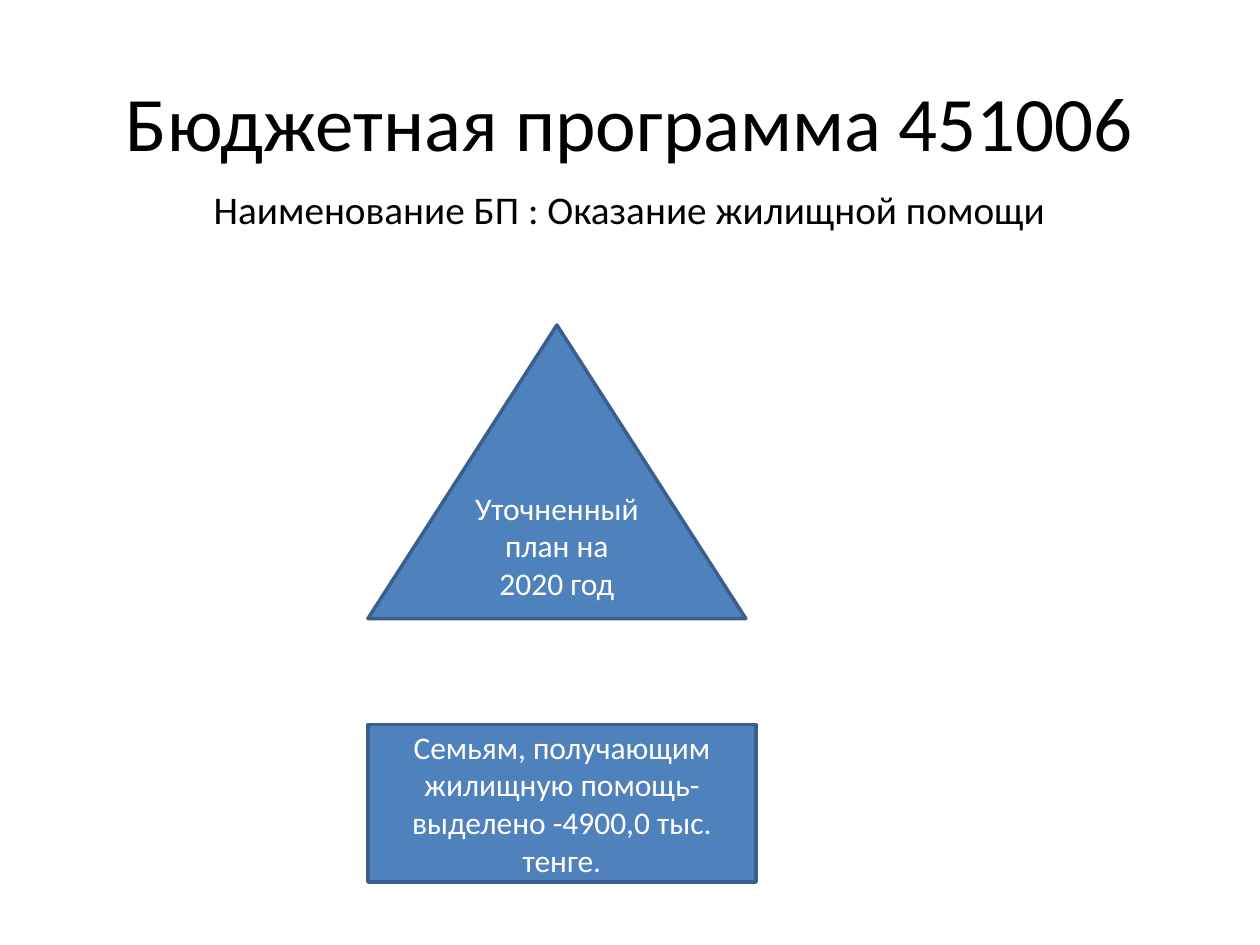
import pptx
import pptx.dml.color
import pptx.enum.shapes
import pptx.enum.text
import pptx.util
from pptx.util import Inches

BLACK = pptx.dml.color.RGBColor(0x00, 0x00, 0x00)
WHITE = pptx.dml.color.RGBColor(0xFF, 0xFF, 0xFF)
BLUE = pptx.dml.color.RGBColor(0x4F, 0x81, 0xBD)
DARK_BLUE = pptx.dml.color.RGBColor(0x3A, 0x5F, 0x8C)


def write_text(shape, text, size, color, anchor):
    """Put one centred paragraph into a shape."""
    frame = shape.text_frame
    frame.text = text
    frame.word_wrap = True
    frame.auto_size = pptx.enum.text.MSO_AUTO_SIZE.NONE
    frame.vertical_anchor = anchor
    paragraph = frame.paragraphs[0]
    paragraph.alignment = pptx.enum.text.PP_ALIGN.CENTER
    paragraph.font.name = "Calibri"
    paragraph.font.size = pptx.util.Pt(size)
    paragraph.font.color.rgb = color


def place_heading(placeholder, box, text, size, anchor):
    """Move a placeholder into its box and fill it."""
    placeholder.left, placeholder.top, placeholder.width, placeholder.height = box
    write_text(placeholder, text, size, BLACK, anchor)


def add_figure(slide, kind, box, text):
    """Draw a blue outlined figure with a white caption in its box."""
    shape = slide.shapes.add_shape(kind, *box)
    shape.shadow.inherit = False
    shape.fill.solid()
    shape.fill.fore_color.rgb = BLUE
    shape.line.color.rgb = DARK_BLUE
    shape.line.width = pptx.util.Pt(2)
    write_text(shape, text, 18, WHITE, pptx.enum.text.MSO_ANCHOR.MIDDLE)


def build_program_slide(presentation):
    """Lay out the budget programme heading and its two figures."""
    slide = presentation.slides.add_slide(presentation.slide_layouts[0])
    place_heading(
        slide.shapes.title,
        (Inches(0.75), Inches(0.5), Inches(8.5), Inches(0.92)),
        "Бюджетная программа 451006", 44, pptx.enum.text.MSO_ANCHOR.MIDDLE,
    )
    place_heading(
        slide.placeholders[1],
        (Inches(1.5), Inches(1.42), Inches(7), Inches(0.67)),
        "Наименование БП : Оказание жилищной помощи", 22.4,
        pptx.enum.text.MSO_ANCHOR.TOP,
    )
    add_figure(
        slide, pptx.enum.shapes.MSO_SHAPE.ISOSCELES_TRIANGLE,
        (Inches(2.92), Inches(2.58), Inches(3), Inches(2.33)),
        "Уточненный план на 2020 год",
    )
    add_figure(
        slide, pptx.enum.shapes.MSO_SHAPE.RECTANGLE,
        (Inches(2.92), Inches(5.75), Inches(3.08), Inches(1.25)),
        "Семьям, получающим жилищную помощь-выделено -4900,0 тыс. тенге.",
    )


def main():
    """Create and save the presentation."""
    presentation = pptx.Presentation()
    presentation.slide_width = Inches(10)
    presentation.slide_height = Inches(7.5)
    build_program_slide(presentation)
    presentation.save("out.pptx")


if __name__ == "__main__":
    main()
